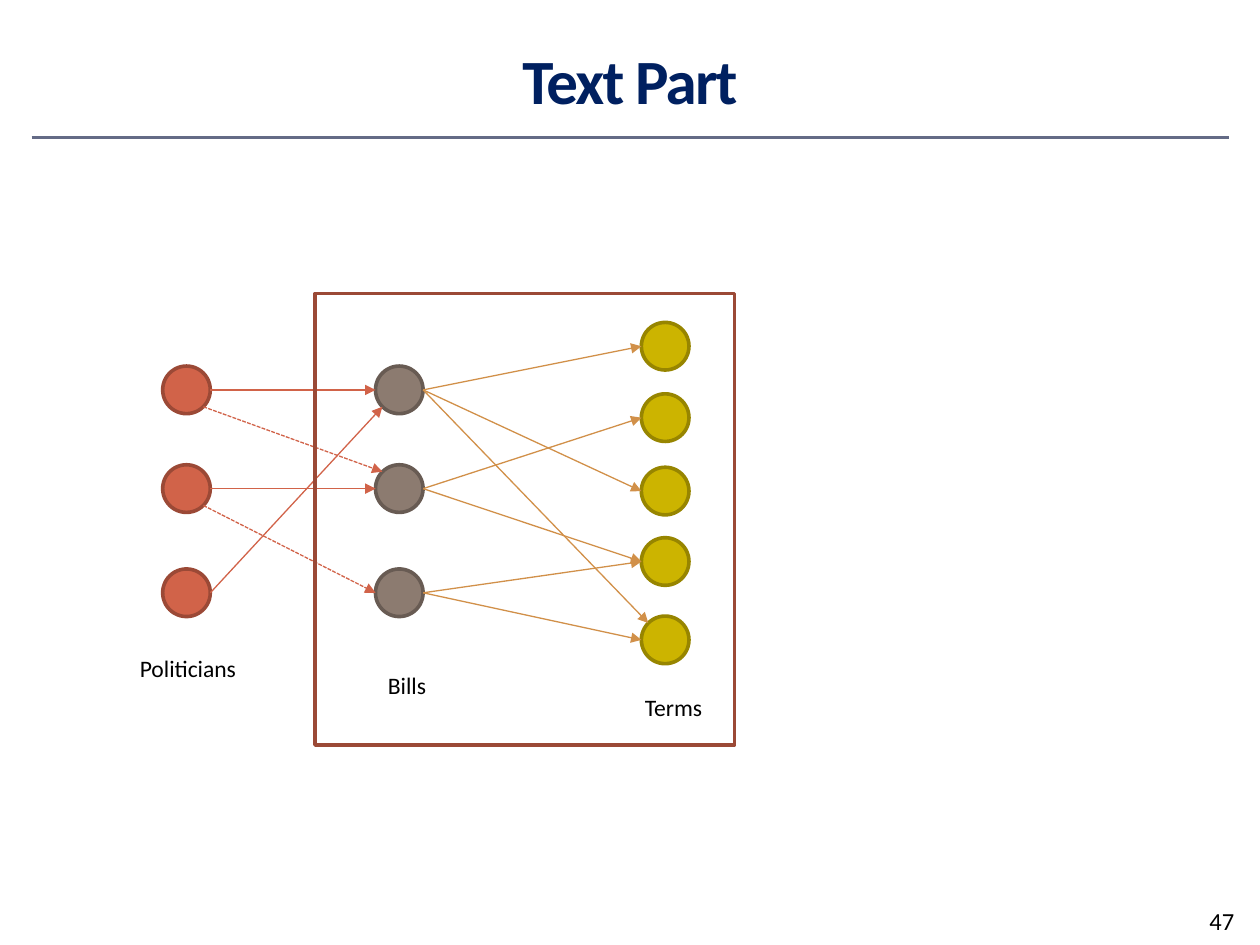
from pptx import Presentation
from pptx.dml.color import RGBColor
from pptx.enum.dml import MSO_LINE
from pptx.enum.shapes import MSO_CONNECTOR, MSO_SHAPE
from pptx.enum.text import MSO_ANCHOR, PP_ALIGN
from pptx.oxml.ns import qn
from pptx.util import Cm, Pt
from lxml import etree

STRAIGHT = MSO_CONNECTOR.STRAIGHT
OVAL, RECT = MSO_SHAPE.OVAL, MSO_SHAPE.RECTANGLE
DASH = MSO_LINE.SQUARE_DOT
MIDDLE, TOP = MSO_ANCHOR.MIDDLE, MSO_ANCHOR.TOP
CENTER, LEFT = PP_ALIGN.CENTER, PP_ALIGN.LEFT
RED, DARK_RED, ORANGE = "D16349", "9B4936", "D19049"
DIAMETER = 0.96


def write(sp, text, size=13.5, color="000000", bold=False, align=LEFT,
          anchor=TOP, spacing=None):
    tf = sp.text_frame
    tf.word_wrap = True
    tf.vertical_anchor = anchor
    p = tf.paragraphs[0]
    p.alignment = align
    r = p.add_run()
    r.text = text
    r.font.name = "Calibri"
    r.font.size = Pt(size)
    r.font.bold = bold
    r.font.color.rgb = RGBColor.from_string(color)
    if spacing is not None:
        r.font._element.set("spc", str(spacing))


def connect(x1, y1, x2, y2, color, width=0.75, dashed=False, arrow=True):
    line = s.shapes.add_connector(STRAIGHT, Cm(x1), Cm(y1), Cm(x2), Cm(y2))
    line.line.color.rgb = RGBColor.from_string(color)
    line.line.width = Pt(width)
    if dashed:
        line.line.dash_style = DASH
    if arrow:
        etree.SubElement(line.line._get_or_add_ln(), qn("a:tailEnd"), type="triangle")
    etree.SubElement(line._element.spPr, qn("a:effectLst"))


prs = Presentation()
prs.slide_width, prs.slide_height = Cm(25.4), Cm(19.05)
s = prs.slides.add_slide(prs.slide_layouts[5])

# Title and rule
connect(0.64, 2.77, 24.77, 2.77, "646B86", width=1.5, arrow=False)
title = s.shapes.title
title.left, title.top, title.width, title.height = Cm(1.27), Cm(0.43), Cm(22.86), Cm(2.34)
write(title, "Text Part", size=36, color="002060", bold=True, align=CENTER,
      anchor=MIDDLE, spacing=-100)

# Node columns: centre x, centre ys, fill, outline
columns = {
    "politician": (3.76, (7.86, 9.85, 11.95), RED, DARK_RED),
    "bill": (8.05, (7.86, 9.85, 11.95), "8C7B70", "685B53"),
    "term": (13.41, (6.98, 8.42, 9.9, 11.32, 12.9), "CCB400", "978500"),
}
for x, ys, fill, outline in columns.values():
    for y in ys:
        sp = s.shapes.add_shape(OVAL, Cm(x - DIAMETER / 2), Cm(y - DIAMETER / 2),
                                Cm(DIAMETER), Cm(DIAMETER))
        sp.shadow.inherit = False
        sp.fill.solid()
        sp.fill.fore_color.rgb = RGBColor.from_string(fill)
        sp.line.color.rgb = RGBColor.from_string(outline)
        sp.line.width = Pt(2.08)

# Edges: row and side of the start, row and side of the end, dashed
sides = {"right": (1, 0), "left": (-1, 0), "lower right": (0.71, 0.71),
         "lower left": (-0.71, 0.71), "upper left": (-0.71, -0.71)}
votes = [
    (0, "right", 0, "left", False),
    (0, "lower right", 1, "upper left", True),
    (1, "right", 1, "left", False),
    (1, "lower right", 2, "left", True),
    (2, "right", 0, "lower left", False),
]
words = [(bill, "right", term, "upper left" if (bill, term) == (0, 4) else "left", False)
         for bill, term in ((0, 0), (0, 2), (0, 4), (1, 1), (2, 4), (1, 3), (2, 3))]
for start, end, edges, color in (("politician", "bill", votes, RED),
                                 ("bill", "term", words, ORANGE)):
    for row1, side1, row2, side2, dashed in edges:
        points = []
        for kind, row, side in ((start, row1, side1), (end, row2, side2)):
            x, ys = columns[kind][:2]
            dx, dy = sides[side]
            points += [x + dx * DIAMETER / 2, ys[row] + dy * DIAMETER / 2]
        connect(*points, color, dashed=dashed)

# Column labels and page number
for text, x, y, w, h, size in (
    ("Politicians", 2.57, 13.06, 3.35, 0.84, 13.5),
    ("Bills", 7.57, 13.41, 1.7, 0.84, 13.5),
    ("Terms", 12.75, 13.84, 2.06, 0.84, 13.5),
    ("47", 24.13, 18.14, 1.27, 0.91, 14),
):
    write(s.shapes.add_textbox(Cm(x), Cm(y), Cm(w), Cm(h)), text, size=size)

# Frame around the text part
frame = s.shapes.add_shape(RECT, Cm(6.35), Cm(5.92), Cm(8.46), Cm(9.1))
frame.shadow.inherit = False
frame.fill.background()
frame.line.color.rgb = RGBColor.from_string(DARK_RED)
frame.line.width = Pt(2.08)

prs.save("out.pptx")
